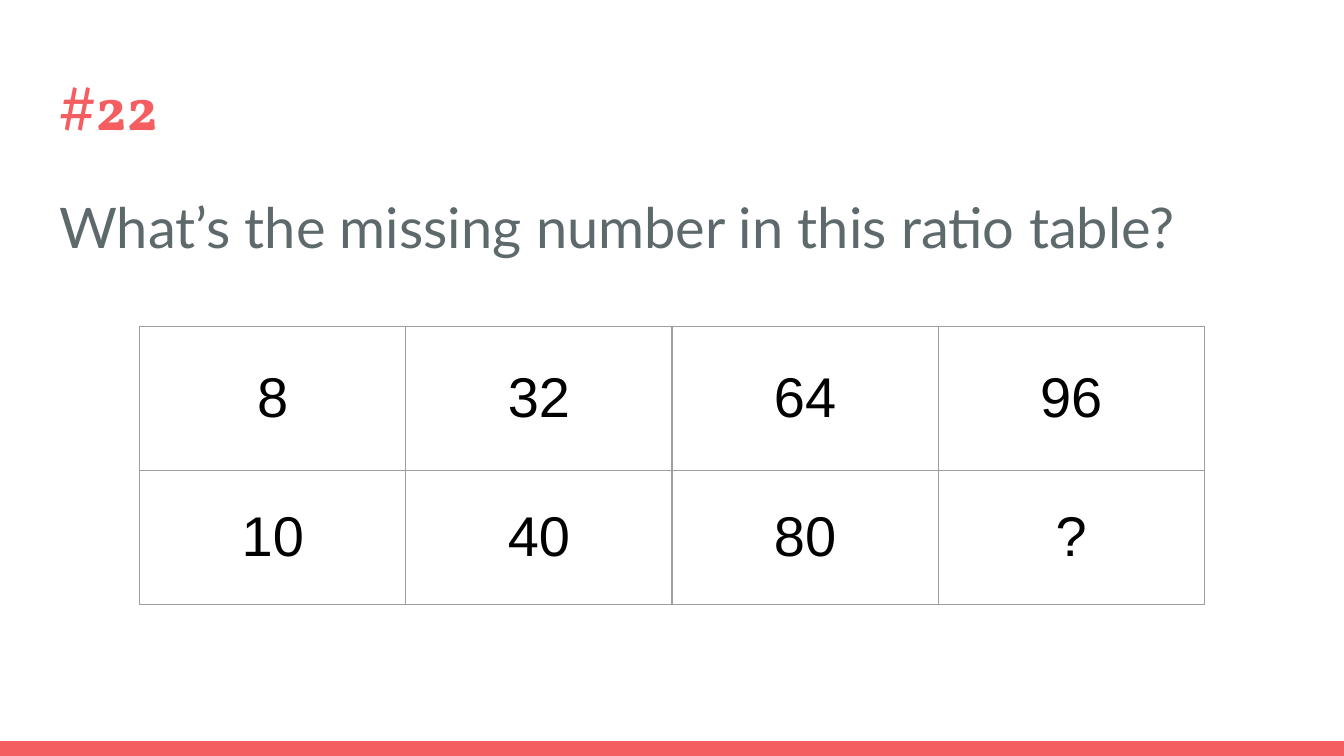
from lxml import etree
from pptx import Presentation
from pptx import util as u
from pptx.dml.color import RGBColor
from pptx.enum import shapes, text
from pptx.oxml import ns

CORAL, SLATE, BLACK, GREY = "F55E61", "5E696C", "000000", "9E9E9E"
INSET = u.Cm(0.25)
RATIOS = [["8", "32", "64", "96"], ["10", "40", "80", "?"]]
ROW_HEIGHTS = [2.72, 2.54]
NUMBER_FORMAT = {"name": "Arial", "size": u.Pt(30)}


def color(value):
    """Turn a hex string into a colour."""
    return RGBColor.from_string(value)


def set_all(target, values):
    """Set each attribute of the target from a dict."""
    for name, value in values.items():
        setattr(target, name, value)


def write(paragraph, wording, ink, font_format, layout=None):
    """Write one formatted run into a paragraph."""
    run = paragraph.add_run()
    run.text = wording
    set_all(run.font, font_format)
    run.font.color.rgb = color(ink)
    set_all(paragraph, layout or {})


def add_band(slide, top, width, height):
    """Draw the coloured band along the bottom edge."""
    band = slide.shapes.add_shape(
        shapes.MSO_SHAPE.RECTANGLE, 0, u.Cm(top), u.Cm(width), u.Cm(height))
    band.shadow.inherit = False
    band.fill.solid()
    band.fill.fore_color.rgb = color(CORAL)
    band.line.fill.background()


def add_text(slide, top, height, wording, ink, font_format, layout=None):
    """Add a full-width text box holding one paragraph."""
    box = slide.shapes.add_textbox(u.Cm(0.87), u.Cm(top), u.Cm(23.67), u.Cm(height))
    frame = box.text_frame
    set_all(frame, {"word_wrap": True, "vertical_anchor": text.MSO_ANCHOR.TOP,
                    "margin_left": INSET, "margin_right": INSET,
                    "margin_top": INSET, "margin_bottom": INSET})
    write(frame.paragraphs[0], wording, ink, font_format, layout)


def outline(cell):
    """Give a cell thin grey borders and no fill."""
    properties = cell._tc.get_or_add_tcPr()
    for side in ("lnL", "lnR", "lnT", "lnB"):
        border = etree.SubElement(properties, ns.qn("a:" + side), w=str(u.Pt(0.75)))
        paint = etree.SubElement(border, ns.qn("a:solidFill"))
        etree.SubElement(paint, ns.qn("a:srgbClr"), val=GREY)
    cell.fill.background()


def add_ratio_table(slide, left, top, column_width):
    """Add the table of ratios with centred numbers."""
    columns = len(RATIOS[0])
    frame = slide.shapes.add_table(
        len(RATIOS), columns, u.Cm(left), u.Cm(top),
        u.Cm(column_width * columns), u.Cm(sum(ROW_HEIGHTS)))
    table = frame.table
    set_all(table, {"first_row": False, "horz_banding": False})
    for column in table.columns:
        column.width = u.Cm(column_width)
    for row, height, numbers in zip(table.rows, ROW_HEIGHTS, RATIOS):
        row.height = u.Cm(height)
        for cell, number in zip(row.cells, numbers):
            set_all(cell, {"vertical_anchor": text.MSO_ANCHOR.MIDDLE,
                           "margin_left": INSET, "margin_right": INSET,
                           "margin_top": INSET, "margin_bottom": INSET})
            write(cell.text_frame.paragraphs[0], number, BLACK, NUMBER_FORMAT,
                  {"alignment": text.PP_ALIGN.CENTER})
            outline(cell)


def main():
    """Build and save the ratio question slide."""
    deck = Presentation()
    set_all(deck, {"slide_width": u.Cm(25.4), "slide_height": u.Cm(14.29)})
    slide = deck.slides.add_slide(deck.slide_layouts[6])
    add_band(slide, 14.01, 25.4, 0.28)
    add_text(slide, 1.09, 1.73, "#22", CORAL,
             {"name": "Vollkorn", "size": u.Pt(32), "bold": True})
    add_text(slide, 3.2, 9.5, "What’s the missing number in this ratio table?", SLATE,
             {"name": "Lato", "size": u.Pt(30)}, {"line_spacing": 1.15})
    add_ratio_table(slide, 2.64, 6.17, 5.03)
    deck.save("out.pptx")


if __name__ == "__main__":
    main()
